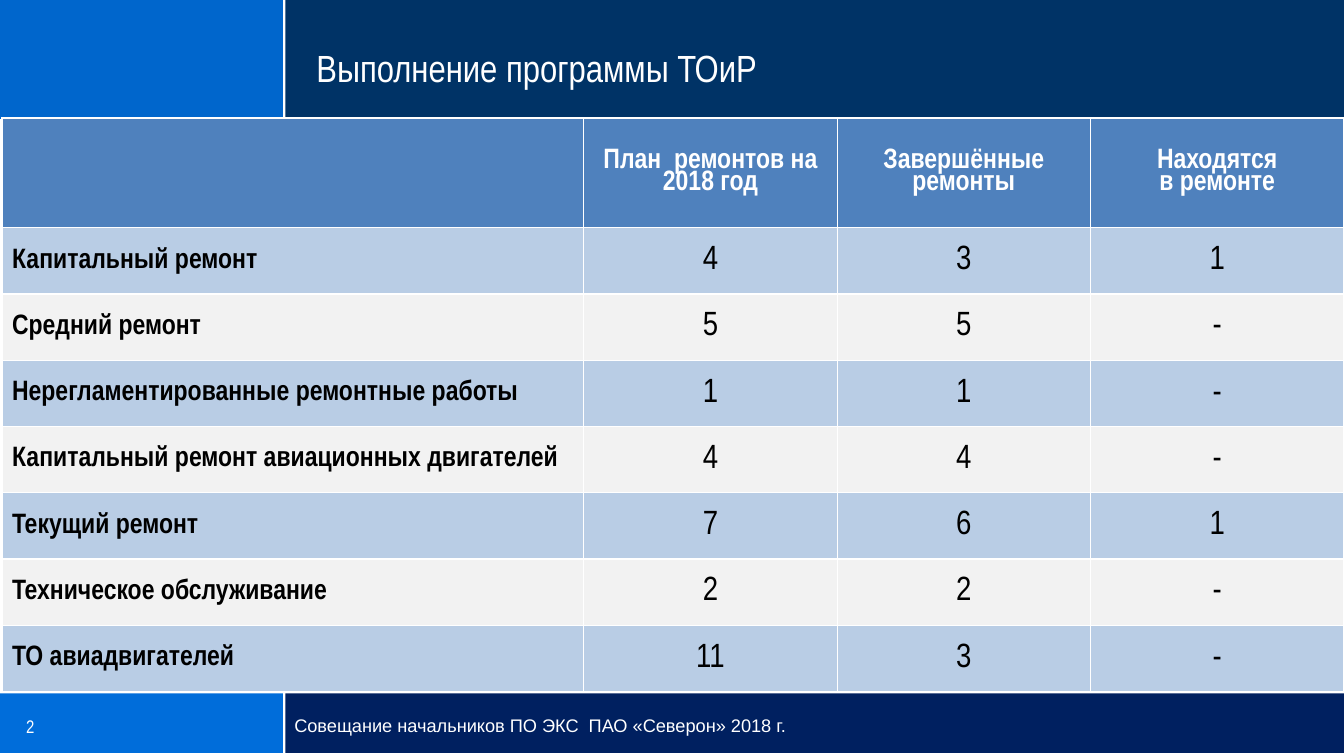
import pptx
import pptx.util
import pptx.dml.color
import pptx.enum.shapes
import pptx.enum.text
import pptx.oxml

Inches = pptx.util.Inches
Pt = pptx.util.Pt
RGBColor = pptx.dml.color.RGBColor
ALIGN = pptx.enum.text.PP_ALIGN

WHITE = RGBColor(0xFF, 0xFF, 0xFF)
BLACK = RGBColor(0x00, 0x00, 0x00)
BLUE = RGBColor(0x00, 0x66, 0xCC)
NAVY = RGBColor(0x00, 0x33, 0x66)
FOOT_BLUE = RGBColor(0x00, 0x6D, 0xDA)
FOOT_NAVY = RGBColor(0x00, 0x20, 0x60)
STEEL = RGBColor(0x4F, 0x81, 0xBD)
PALE = RGBColor(0xB9, 0xCD, 0xE5)
GREY = RGBColor(0xF2, 0xF2, 0xF2)

NARROW = "Arial Narrow"
SPLIT = 2.82  # where the left block of both bands ends

HEADS = ["", "План  ремонтов на 2018 год", "Завершённые ремонты", "Находятся\nв ремонте"]
REPAIRS = [
    ["Капитальный ремонт", "4", "3", "1"],
    ["Средний ремонт", "5", "5", "-"],
    ["Нерегламентированные ремонтные работы", "1", "1", "-"],
    ["Капитальный ремонт авиационных двигателей", "4", "4", "-"],
    ["Текущий ремонт", "7", "6", "1"],
    ["Техническое обслуживание", "2", "2", "-"],
    ["ТО авиадвигателей", "11", "3", "-"],
]


def style(par, size, color, name=NARROW, bold=False):
    font = par.font
    font.size, font.name, font.bold = Pt(size), name, bold
    font.color.rgb = color


def add_rect(slide, left, top, width, height, color):
    rect = slide.shapes.add_shape(
        pptx.enum.shapes.MSO_SHAPE.RECTANGLE,
        Inches(left), Inches(top), Inches(width), Inches(height))
    rect.shadow.inherit = False
    rect.fill.solid()
    rect.fill.fore_color.rgb = color
    rect.line.fill.background()


def add_label(slide, left, top, width, height, text, size, name=NARROW):
    box = slide.shapes.add_textbox(
        Inches(left), Inches(top), Inches(width), Inches(height))
    frame = box.text_frame
    frame.word_wrap = True
    frame.text = text
    style(frame.paragraphs[0], size, WHITE, name)


def add_band(slide, top, width, height, left_color, right_color):
    """Two-colour band with a white rule at the split."""
    add_rect(slide, 0, top, SPLIT, height, left_color)
    add_rect(slide, SPLIT + 0.01, top, width - SPLIT - 0.01, height, right_color)
    rule = slide.shapes.add_connector(
        pptx.enum.shapes.MSO_CONNECTOR.STRAIGHT,
        Inches(SPLIT), Inches(top), Inches(SPLIT), Inches(top + height))
    rule.line.color.rgb = WHITE
    rule.line.width = Pt(1.25)
    rule._element.spPr.append(pptx.oxml.parse_xml(
        '<a:effectLst xmlns:a="http://schemas.openxmlformats.org/drawingml/2006/main"/>'))


def add_header(slide, top, width, height):
    add_band(slide, top, width, height, BLUE, NAVY)
    add_label(slide, SPLIT + 0.22, top + 0.39, 9.92, 0.51, "Выполнение программы ТОиР", 27)


def add_footer(slide, top, width, height):
    add_band(slide, top, width, height, FOOT_BLUE, FOOT_NAVY)
    add_label(slide, 0.16, top + 0.17, SPLIT, 0.33, "2", 13)
    add_label(slide, SPLIT, top + 0.16, 9.92, 0.33,
              "Совещание начальников ПО ЭКС  ПАО «Северон» 2018 г.", 13, "Arial")


def fill_cell(cell, text, row, col):
    cell.fill.solid()
    cell.fill.fore_color.rgb = STEEL if row == 0 else (PALE if row % 2 else GREY)
    cell.vertical_anchor = pptx.enum.text.MSO_ANCHOR.MIDDLE
    if col:
        cell.margin_left = cell.margin_right = 0
        cell.margin_top = cell.margin_bottom = 0
    cell.text = text
    for par in cell.text_frame.paragraphs:
        par.alignment = ALIGN.CENTER if col else ALIGN.LEFT
        if row == 0:
            par.line_spacing = 0.85
            style(par, 20, WHITE, bold=True)
        elif col == 0:
            style(par, 20, BLACK, bold=True)
        else:
            style(par, 24, BLACK)


def add_repairs(slide, left, top, width, height):
    rows = [HEADS] + REPAIRS
    table = slide.shapes.add_table(
        len(rows), len(HEADS),
        Inches(left), Inches(top), Inches(width), Inches(height)).table
    # Wide label column, equal number columns
    first = 5.77
    for col, column in enumerate(table.columns):
        column.width = Inches((width - first) / 3 if col else first)
    # Tall heading row, equal body rows
    head = 1.09
    for row, line in enumerate(table.rows):
        line.height = Inches((height - head) / len(REPAIRS) if row else head)
    for row, texts in enumerate(rows):
        for col, text in enumerate(texts):
            fill_cell(table.cell(row, col), text, row, col)


def main():
    deck = pptx.Presentation()
    deck.slide_width, deck.slide_height = Inches(13.33), Inches(7.5)
    slide = deck.slides.add_slide(deck.slide_layouts[6])
    add_header(slide, 0, 13.33, 1.18)
    add_footer(slide, 6.88, 13.33, 0.59)
    add_repairs(slide, 0.02, 1.17, 13.31, 5.69)
    deck.save("out.pptx")


if __name__ == "__main__":
    main()
